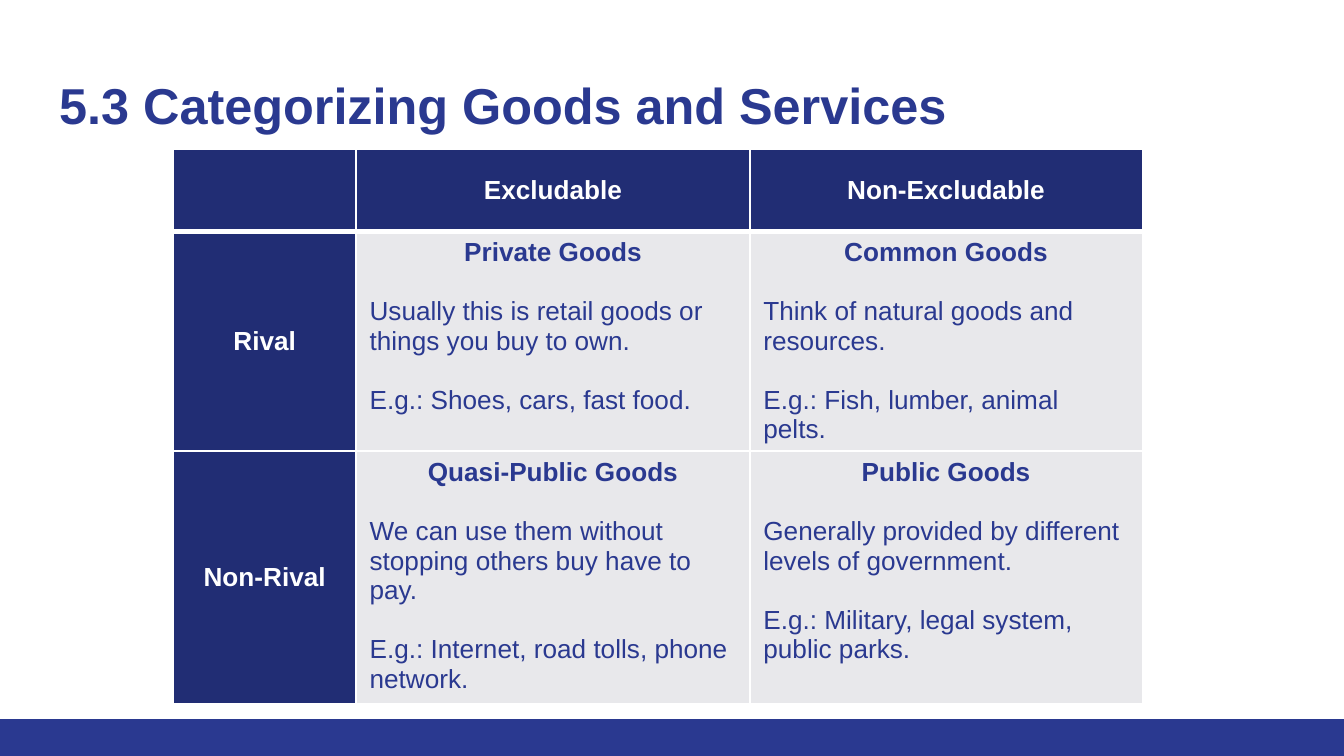
from dataclasses import dataclass

from lxml import etree
from pptx import Presentation
from pptx.dml.color import RGBColor
from pptx.enum import shapes, text
from pptx.oxml import ns
from pptx.util import Inches, Pt


@dataclass(frozen=True)
class Theme:
    font: str = "Arial"
    blue: str = "2A3990"
    navy: str = "212D74"
    gray: str = "E8E8EB"
    white: str = "FFFFFF"
    title_size: int = 27
    table_size: int = 14
    paragraph_gap: int = 16


theme = Theme()


def format_paragraph(paragraph, size, color, bold, alignment):
    font = paragraph.font
    font.name, font.size, font.bold = theme.font, Pt(size), bold
    font.color.rgb = RGBColor.from_string(color)
    paragraph.alignment = alignment


def style_cell(cell, fill, bottom_width):
    """Set white borders, then the fill, which must follow them in the XML."""
    properties = cell._tc.get_or_add_tcPr()
    for side in ("L", "R", "T", "B"):
        width = bottom_width if side == "B" else 1
        line = etree.SubElement(properties, ns.qn(f"a:ln{side}"), w=str(Pt(width)))
        solid = etree.SubElement(line, ns.qn("a:solidFill"))
        etree.SubElement(solid, ns.qn("a:srgbClr"), val=theme.white)
    cell.fill.solid()
    cell.fill.fore_color.rgb = RGBColor.from_string(fill)


# A 16:9 slide
presentation = Presentation()
presentation.slide_width = Inches(10)
presentation.slide_height = Inches(10) * 9 // 16
slide = presentation.slides.add_slide(presentation.slide_layouts[5])

# Footer band, down to the bottom edge
band_top = Inches(5.35)
band = slide.shapes.add_shape(
    shapes.MSO_SHAPE.RECTANGLE, 0, band_top,
    presentation.slide_width, presentation.slide_height - band_top)
band.shadow.inherit = False
band.fill.solid()
band.fill.fore_color.rgb = RGBColor.from_string(theme.blue)
band.line.fill.background()

# Title
title = slide.shapes.title
title.left, title.top = Inches(0.34), Inches(0.45)
title.width, title.height = Inches(9.32), Inches(0.65)
frame = title.text_frame
frame.text = "5.3 Categorizing Goods and Services"
frame.auto_size = text.MSO_AUTO_SIZE.NONE
frame.vertical_anchor = text.MSO_ANCHOR.BOTTOM
frame.margin_left = frame.margin_right = Inches(0.1)
frame.margin_top = frame.margin_bottom = Inches(0.1)
format_paragraph(frame.paragraphs[0], theme.title_size, theme.blue, True, text.PP_ALIGN.LEFT)

# Table of goods: header cells hold one line, the others a heading and two paragraphs
goods = [
    ["", "Excludable", "Non-Excludable"],
    ["Rival",
     "Private Goods\nUsually this is retail goods or things you buy to own.\n"
     "E.g.: Shoes, cars, fast food.",
     "Common Goods\nThink of natural goods and resources.\n"
     "E.g.: Fish, lumber, animal pelts."],
    ["Non-Rival",
     "Quasi-Public Goods\nWe can use them without stopping others buy have to pay.\n"
     "E.g.: Internet, road tolls, phone network.",
     "Public Goods\nGenerally provided by different levels of government.\n"
     "E.g.: Military, legal system, public parks."],
]
column_widths = [1.36, 2.93, 2.92]
row_heights = [0.61, 1.63, 1.88]
table = slide.shapes.add_table(
    len(row_heights), len(column_widths), Inches(1.29), Inches(1.11),
    Inches(sum(column_widths)), Inches(sum(row_heights))).table
for column, width in zip(table.columns, column_widths):
    column.width = Inches(width)
for row, height in zip(table.rows, row_heights):
    row.height = Inches(height)

for row_index, row_texts in enumerate(goods):
    for column_index, wording in enumerate(row_texts):
        cell = table.cell(row_index, column_index)
        is_header = row_index == 0 or column_index == 0
        style_cell(cell, theme.navy if is_header else theme.gray, 3 if row_index == 0 else 1)
        cell.vertical_anchor = text.MSO_ANCHOR.MIDDLE if is_header else text.MSO_ANCHOR.TOP
        cell.text = wording
        for index, paragraph in enumerate(cell.text_frame.paragraphs):
            is_heading = index == 0
            format_paragraph(
                paragraph, theme.table_size, theme.white if is_header else theme.blue,
                is_heading, text.PP_ALIGN.CENTER if is_heading else text.PP_ALIGN.LEFT)
            if not is_heading:
                paragraph.space_before = Pt(theme.paragraph_gap)

presentation.save("out.pptx")
